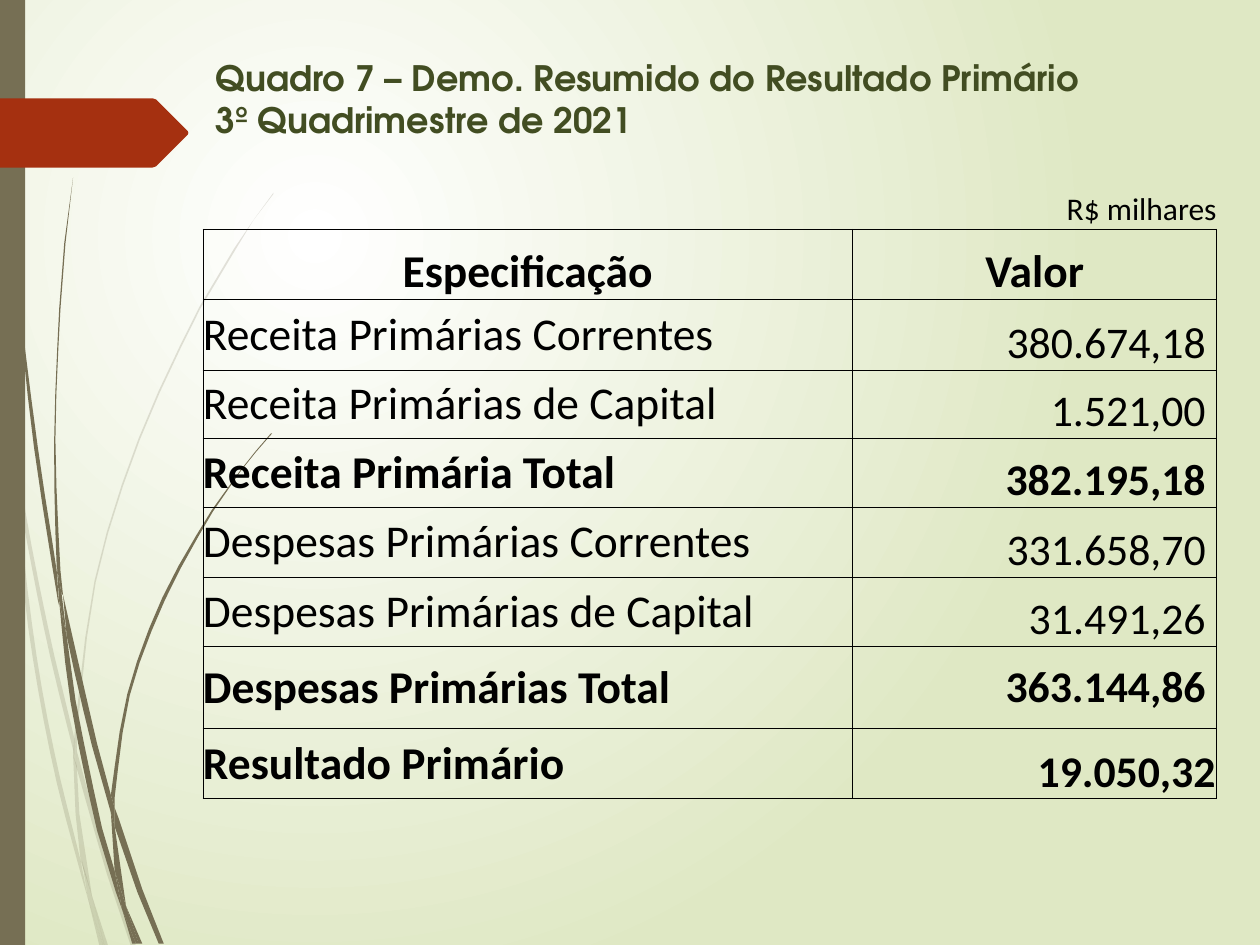
"""Builds the slide with the primary result table for the third period of 2021."""
from math import dist

from pptx import Presentation
from pptx.dml.color import RGBColor as RGB
from pptx.enum.text import MSO_ANCHOR as ANCHOR, MSO_AUTO_SIZE as AUTO, PP_ALIGN as ALIGN
from pptx.enum.shapes import MSO_SHAPE as SHAPE
from pptx.oxml import parse_xml
from pptx.oxml.ns import nsdecls, qn
from pptx.util import Pt

THEME = {
    "olive": "766F54", "rust": "A53010", "moss": "424D22", "ink": "000000",
    "glow": "FFFFFF", "leaf": "DFE8C4",
    "head": "TeX Gyre Adventor", "body": "Calibri",
    "title": 20, "note": 18, "label": 26, "value": 25, "rule": 0.5,
}
TITLE = "Quadro 7 – Demo. Resumido do Resultado Primário \v3º Quadrimestre de 2021"
UNIT = "R$ milhares"
HEADS = ("Especificação", "Valor")
ROWS = [
    ("Receita Primárias Correntes", "380.674,18 ", False, 40.4),
    ("Receita Primárias de Capital", "1.521,00 ", False, 38.9),
    ("Receita Primária Total", "382.195,18 ", True, 39.4),
    ("Despesas Primárias Correntes", "331.658,70 ", False, 40),
    ("Despesas Primárias de Capital", "31.491,26 ", False, 39.4),
    ("Despesas Primárias Total", "363.144,86 ", True, 47.4),
    ("Resultado Primário", "19.050,32", True, 40),
]
COLS = (168.5, 100, 100, 2.2, 208)
TOPS = (70.5, 40.1)
LEFT, TOP = 116, 60.5

GRID = 0.72
PALE = [
    ([(0, 282), (6, 322), (8, 350)], [(0, 299), (7, 344), (8, 350)]),
    ([(10, 345), (25, 433), (43, 520), (59, 586)],
     [(10, 345), (12, 376), (25, 449), (40, 522), (59, 599)]),
    ([(61, 596), (64, 607), (88, 692), (108, 751)], [(61, 610), (85, 694), (104, 751)]),
    ([(73, 711), (83, 751)], [(73, 711), (86, 751)]),
    ([(8, 350), (19, 470), (30, 546), (45, 621), (64, 693), (70, 714)],
     [(8, 350), (12, 376), (22, 469), (33, 545), (48, 619), (64, 683), (70, 714)]),
    ([(58, 599), (60, 646), (64, 683), (73, 711)],
     [(58, 599), (61, 608), (63, 646), (73, 711)]),
    ([(59, 586), (59, 584), (75, 461), (110, 348), (158, 244), (186, 197), (201, 175), (217, 153)],
     [(61, 596), (61, 584), (76, 462), (111, 349), (159, 245), (187, 198), (201, 175), (217, 154)]),
    ([(70, 714), (79, 751)], [(70, 714), (82, 751)]),
    ([(59, 586), (58, 599), (61, 610)], [(59, 586), (61, 596), (61, 610)]),
    ([(65, 683), (70, 714), (82, 751)], [(65, 683), (73, 711), (83, 751)]),
]
DARK = [
    ([(2, 0), (3, 48), (5, 110), (14, 233), (27, 355), (46, 477), (47, 481)],
     [(3, 0), (4, 48), (6, 109), (15, 232), (30, 355), (45, 453), (47, 481)]),
    ([(50, 472), (53, 505), (73, 592), (88, 645)], [(50, 472), (77, 590), (88, 631), (88, 645)]),
    ([(91, 641), (94, 649), (113, 706), (130, 749)], [(91, 656), (109, 708), (126, 749)]),
    ([(47, 477), (56, 557), (77, 659), (92, 708), (97, 722)],
     [(47, 477), (53, 505), (60, 556), (81, 657), (91, 691), (97, 722)]),
    ([(58, 141), (51, 193), (47, 245), (43, 349), (45, 449), (49, 472)],
     [(58, 141), (52, 193), (48, 245), (44, 349), (48, 453), (50, 472)]),
    ([(100, 719), (110, 749)], [(100, 719), (113, 749)]),
    ([(45, 449), (47, 477), (53, 505)], [(45, 449), (49, 472), (53, 505)]),
    ([(88, 631), (101, 551), (129, 474), (168, 405), (191, 373), (203, 358), (215, 344)],
     [(91, 641), (91, 633), (103, 552), (131, 476), (169, 406), (191, 374), (203, 359), (216, 344)]),
    ([(97, 722), (105, 749)], [(97, 722), (108, 749)]),
    ([(88, 645), (91, 691), (100, 719)], [(88, 645), (91, 656), (100, 719)]),
    ([(88, 631), (88, 645), (91, 656)], [(88, 631), (91, 641), (91, 656)]),
    ([(91, 691), (97, 722), (108, 749)], [(91, 691), (100, 719), (110, 749)]),
]
ARROW = [(0, 78), (121, 78), (124, 79), (149, 104), (149.5, 105.5), (149, 107),
         (124, 132), (121, 133), (0, 133)]


def curve(knots):
    """Runs a line through the knots, rounding only its long parts."""
    ends = [knots[0], *knots, knots[-1]]
    line = []
    for a, b, c, d in zip(ends, ends[1:], ends[2:], ends[3:]):
        steps = 3 if dist(b, c) > 70 else 1
        for k in range(steps):
            t = k / steps
            line.append(tuple(
                q + t / 2 * (r - p + t * (2 * p - 5 * q + 4 * r - s + t * (3 * q - p - 3 * r + s)))
                for p, q, r, s in zip(a, b, c, d)))
    return line + [knots[-1]]


def paint(shape, tone, alpha=None):
    """Gives a shape a plain fill without line or shadow."""
    shape.shadow.inherit = False
    shape.fill.solid()
    shape.fill.fore_color.rgb = RGB.from_string(THEME[tone])
    shape.line.fill.background()
    if alpha:
        tint = shape.fill._xPr.find(".//" + qn("a:srgbClr"))
        tint.append(parse_xml(f'<a:alpha {nsdecls("a")} val="{alpha * 1000}"/>'))


def outline(shapes, knots, tone, alpha=None):
    """Draws a closed outline from grid points."""
    first, *rest = [(Pt(x * GRID), Pt(y * GRID)) for x, y in knots]
    form = shapes.build_freeform(*first)
    form.add_line_segments(rest, close=True)
    shape = form.convert_to_shape()
    paint(shape, tone, alpha)
    return shape


def style(par, size, bold=False, align=ALIGN.LEFT, face="body", tone="ink"):
    """Sets the look of a paragraph."""
    par.alignment = align
    font = par.font
    font.name, font.size, font.bold = THEME[face], Pt(THEME[size]), bold
    font.color.rgb = RGB.from_string(THEME[tone])


def pad(cell, inset=0):
    """Sets the margins of a cell."""
    cell.margin_left = cell.margin_right = cell.margin_top = Pt(inset)
    cell.margin_bottom = 0


def write(cell, text, size, bold, align, anchor, inset=0):
    """Fills one table cell."""
    cell.text = text
    cell.vertical_anchor = anchor
    pad(cell, inset)
    style(cell.text_frame.paragraphs[0], size, bold, align)


def border(cell, sides):
    """Rules the named sides of a cell and clears its fill."""
    props = cell._tc.get_or_add_tcPr()
    for side in sides:
        props.append(parse_xml(
            f'<a:ln{side} {nsdecls("a")} w="{Pt(THEME["rule"])}"><a:solidFill>'
            f'<a:srgbClr val="{THEME["ink"]}"/></a:solidFill></a:ln{side}>'))
    cell.fill.background()


def backdrop(slide):
    """Sets the round gradient behind the slide."""
    fill = slide.background.fill
    fill.gradient()
    for stop, tone in zip(fill.gradient_stops, ("glow", "leaf")):
        stop.color.rgb = RGB.from_string(THEME[tone])
    grad = slide._element.find(".//" + qn("a:gradFill"))
    grad.remove(grad.find(qn("a:lin")))
    grad.append(parse_xml(
        f'<a:path {nsdecls("a")} path="circle">'
        '<a:fillToRect l="50000" t="50000" r="100000" b="100000"/></a:path>'))


def decor(slide):
    """Draws the grass, the side bar and the arrow, and hands them to the layout."""
    parts = []
    for blades, alpha in ((PALE, 20), (DARK, None)):
        group = slide.shapes.add_group_shape()
        for near, far in blades:
            outline(group.shapes, curve(near) + curve(far)[::-1], "olive", alpha)
        parts.append(group)
    bar = slide.shapes.add_shape(SHAPE.RECTANGLE, 0, 0, Pt(14.4), Pt(540))
    paint(bar, "olive")
    parts += [bar, outline(slide.shapes, ARROW, "rust")]
    for part in parts:
        slide.slide_layout.shapes._spTree.append(part._element)


def heading(slide):
    """Places and formats the title."""
    title = slide.shapes.title
    title.left, title.top, title.width, title.height = Pt(LEFT), Pt(28.8), Pt(644.4), Pt(82.8)
    frame = title.text_frame
    frame.text = TITLE
    frame.auto_size, frame.vertical_anchor = AUTO.NONE, ANCHOR.TOP
    style(frame.paragraphs[0], "title", True, face="head", tone="moss")


def figures(slide):
    """Builds the table of figures."""
    highs = [*TOPS, *(row[3] for row in ROWS)]
    last = len(COLS) - 1
    table = slide.shapes.add_table(len(highs), len(COLS), Pt(LEFT), Pt(TOP),
                                   Pt(sum(COLS)), Pt(sum(highs))).table
    table.first_row = table.horz_banding = False
    table._tbl.tblPr.find(qn("a:tableStyleId")).text = "{2D5ABB26-0587-4C30-8999-92F81FD0307C}"
    for col, wide in zip(table.columns, COLS):
        col.width = Pt(wide)
    for n, (row, high) in enumerate(zip(table.rows, highs)):
        row.height = Pt(high)
        for cell in row.cells:
            pad(cell)
            border(cell, "LRTB" if n else "B")
        if n:
            table.cell(n, 0).merge(table.cell(n, last - 1))
    write(table.cell(0, last), UNIT, "note", False, ALIGN.RIGHT, ANCHOR.BOTTOM)
    for col, text in zip((0, last), HEADS):
        write(table.cell(1, col), text, "label", True, ALIGN.CENTER, ANCHOR.BOTTOM)
    for n, (label, value, bold, high) in enumerate(ROWS, len(TOPS)):
        anchor = ANCHOR.MIDDLE if high > 45 else ANCHOR.BOTTOM
        write(table.cell(n, 0), label, "label", bold, ALIGN.LEFT, ANCHOR.MIDDLE)
        write(table.cell(n, last), value, "value", bold, ALIGN.RIGHT, anchor, 0.72)


def main():
    """Builds and saves the slide."""
    deck = Presentation()
    deck.slide_width, deck.slide_height = Pt(720), Pt(540)
    slide = deck.slides.add_slide(deck.slide_layouts[5])
    backdrop(slide)
    decor(slide)
    heading(slide)
    figures(slide)
    deck.save("out.pptx")


if __name__ == "__main__":
    main()
